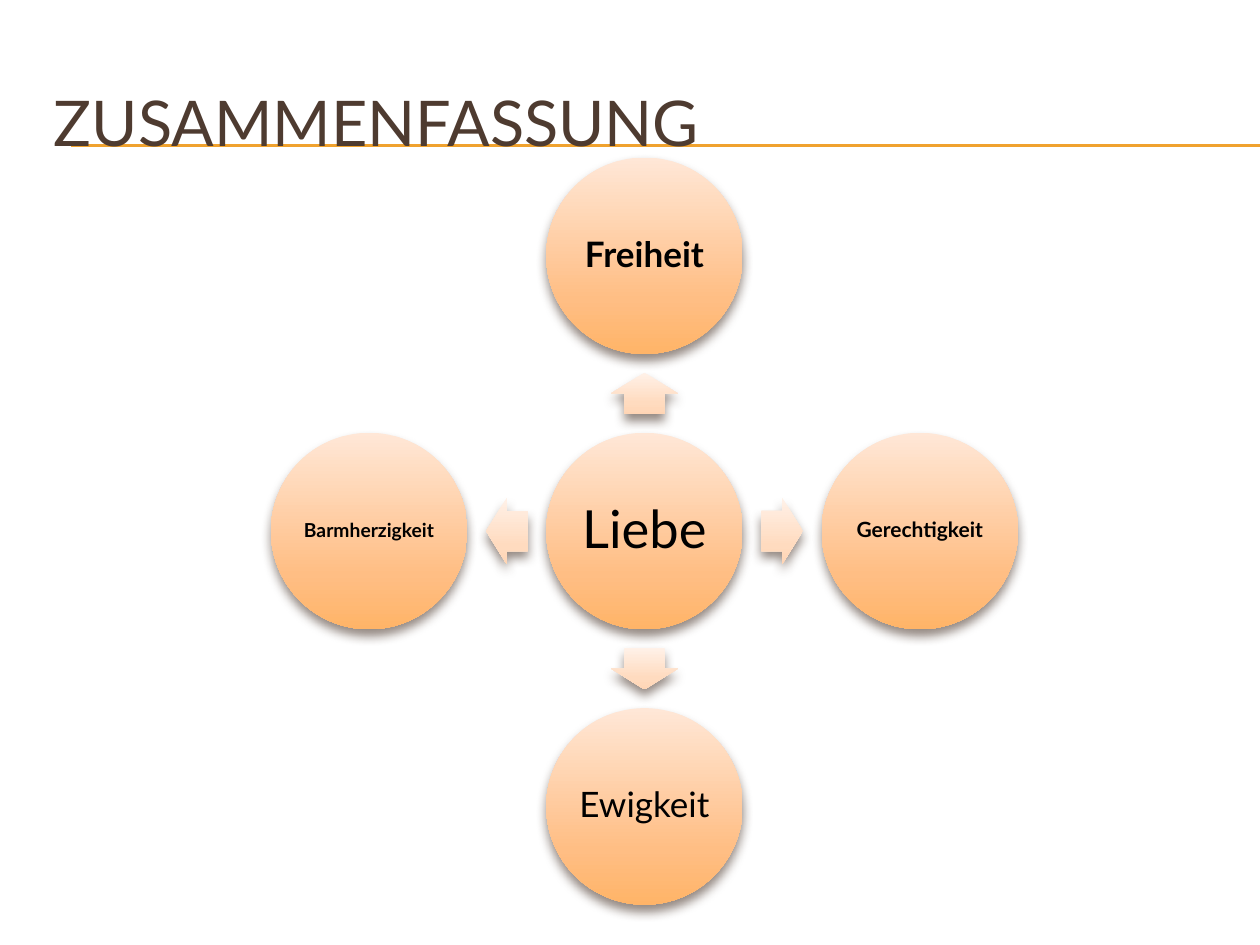
import math

from lxml import etree
from pptx import Presentation
from pptx import util as u
from pptx.dml.color import RGBColor
from pptx.enum import shapes, text
from pptx.oxml.ns import qn

FONT = "Lato"
BROWN, GOLD, BLACK = "4E3B30", "F0A22E", "000000"
NODE_STOPS = ((0, "FFE7D7"), (72, "FFBE84"), (100, "FFB468"))
ARROW_STOPS = ((0, "FFF1E8"), (72, "FFDBBF"), (100, "FFD5B5"))

HUB = ("Liebe", 30, False)
# Word, text size, bold, direction in degrees clockwise from the right
VIRTUES = (
    ("Freiheit", 20, True, 270),
    ("Gerechtigkeit", 12, True, 0),
    ("Ewigkeit", 20, False, 90),
    ("Barmherzigkeit", 11, True, 180),
)


def color(value):
    return RGBColor.from_string(value)


def add_run(paragraph, words, size, tint, bold=False):
    run = paragraph.add_run()
    run.text = words
    run.font.name = FONT
    run.font.size = u.Pt(size)
    run.font.bold = bold
    run.font.color.rgb = color(tint)


def add_color_xml(parent, value):
    return etree.SubElement(parent, qn("a:srgbClr"), val=value)


def style_shape(shape, stops):
    """Vertical gradient that ignores rotation, no outline, soft shadow below."""
    shape.line.fill.background()
    gradient = etree.Element(qn("a:gradFill"), rotWithShape="0")
    stop_list = etree.SubElement(gradient, qn("a:gsLst"))
    for share, tint in stops:
        stop = etree.SubElement(stop_list, qn("a:gs"), pos=str(share * 1000))
        add_color_xml(stop, tint)
    etree.SubElement(gradient, qn("a:lin"), ang="5400000", scaled="0")
    properties = shape.element.spPr
    properties.find(qn("a:ln")).addprevious(gradient)

    shape.shadow.inherit = False
    shadow = etree.SubElement(
        properties.find(qn("a:effectLst")), qn("a:outerShdw"),
        blurRad=str(u.Pt(6)), dist=str(u.Pt(4)), dir="5400000", rotWithShape="0")
    etree.SubElement(add_color_xml(shadow, BROWN), qn("a:alpha"), val="60000")


def add_centered(slide, kind, x, y, width, height, stops):
    shape = slide.shapes.add_shape(
        kind, u.Inches(x - width / 2), u.Inches(y - height / 2),
        u.Inches(width), u.Inches(height))
    style_shape(shape, stops)
    return shape


def add_node(slide, x, y, size, words, points, bold):
    node = add_centered(slide, shapes.MSO_SHAPE.OVAL, x, y, size, size, NODE_STOPS)
    frame = node.text_frame
    frame.word_wrap = True
    frame.vertical_anchor = text.MSO_ANCHOR.MIDDLE
    inset = u.Pt(points * 0.1)
    frame.margin_left = frame.margin_right = inset
    frame.margin_top = frame.margin_bottom = inset
    paragraph = frame.paragraphs[0]
    paragraph.alignment = text.PP_ALIGN.CENTER
    paragraph.line_spacing = 0.9
    add_run(paragraph, words, points, BLACK, bold)


def add_heading(slide, left, top, width, height):
    # Double rule running to the slide's right edge
    for y in (1.15, 1.16):
        rule = slide.shapes.add_connector(
            shapes.MSO_CONNECTOR.STRAIGHT,
            u.Inches(0.56), u.Inches(y), u.Inches(10), u.Inches(y))
        rule.line.color.rgb = color(GOLD)
        rule.line.width = u.Pt(0.75)
        etree.SubElement(rule.element.spPr, qn("a:effectLst"))

    # Title
    title = slide.shapes.add_textbox(
        u.Inches(left), u.Inches(top), u.Inches(width), u.Inches(height))
    frame = title.text_frame
    frame.word_wrap = True
    frame.vertical_anchor = text.MSO_ANCHOR.MIDDLE
    add_run(frame.paragraphs[0], "ZUSAMMENFASSUNG", 36, BROWN)


def add_radial_diagram(slide, left, top, side):
    node_size = side * 0.263
    ring = (side - node_size) / 2
    center_x, center_y = left + side / 2, top + side / 2

    # Hub
    add_node(slide, center_x, center_y, node_size, *HUB)

    # Outer nodes, each with an arrow halfway from the hub
    for words, points, bold, angle in VIRTUES:
        dx = ring * math.cos(math.radians(angle))
        dy = ring * math.sin(math.radians(angle))
        arrow = add_centered(
            slide, shapes.MSO_SHAPE.RIGHT_ARROW,
            center_x + dx / 2, center_y + dy / 2, 0.33, 0.53, ARROW_STOPS)
        arrow.adjustments[0], arrow.adjustments[1] = 0.6, 0.5
        arrow.rotation = angle
        add_node(slide, center_x + dx, center_y + dy, node_size, words, points, bold)


def main():
    deck = Presentation()
    deck.slide_width, deck.slide_height = u.Inches(10), u.Inches(7.5)
    slide = deck.slides.add_slide(deck.slide_layouts[6])
    add_heading(slide, 0.33, 0.5, 9.5, 0.92)
    add_radial_diagram(slide, 2.15, 1.25, 5.93)
    deck.save("out.pptx")


if __name__ == "__main__":
    main()
